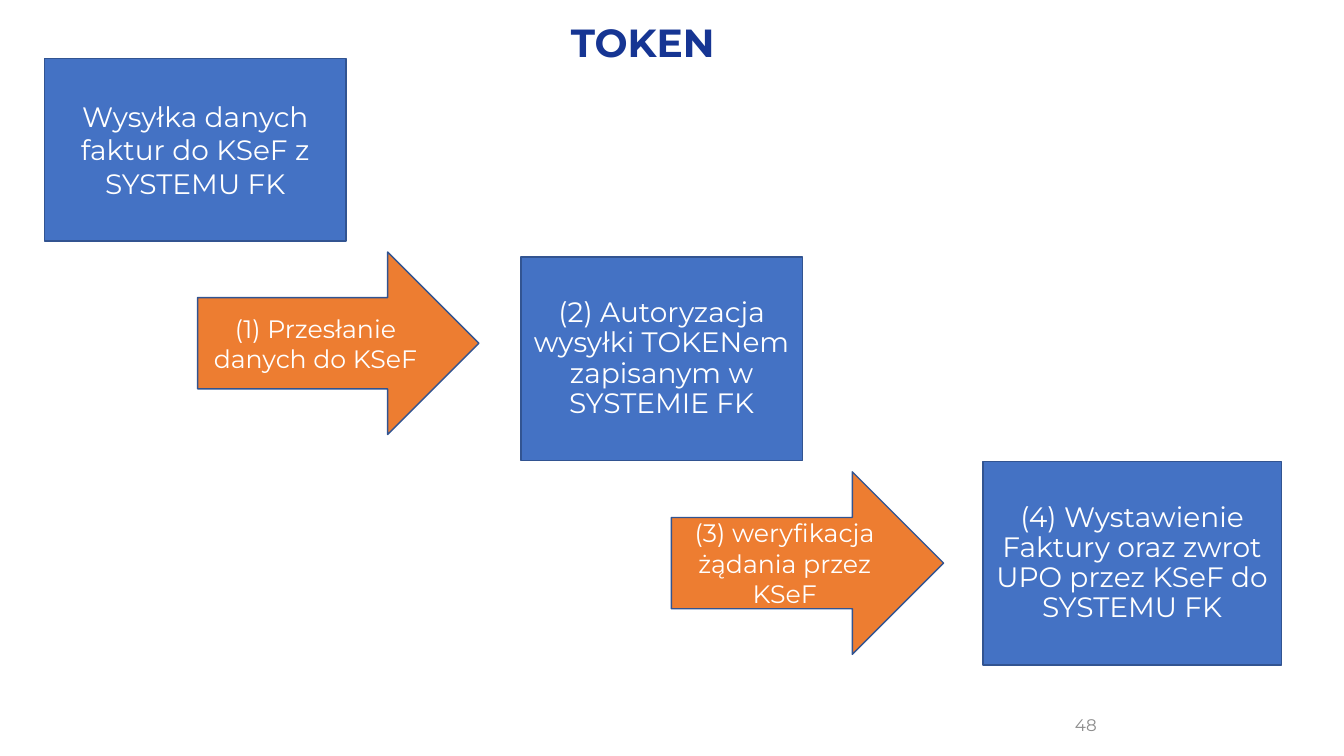
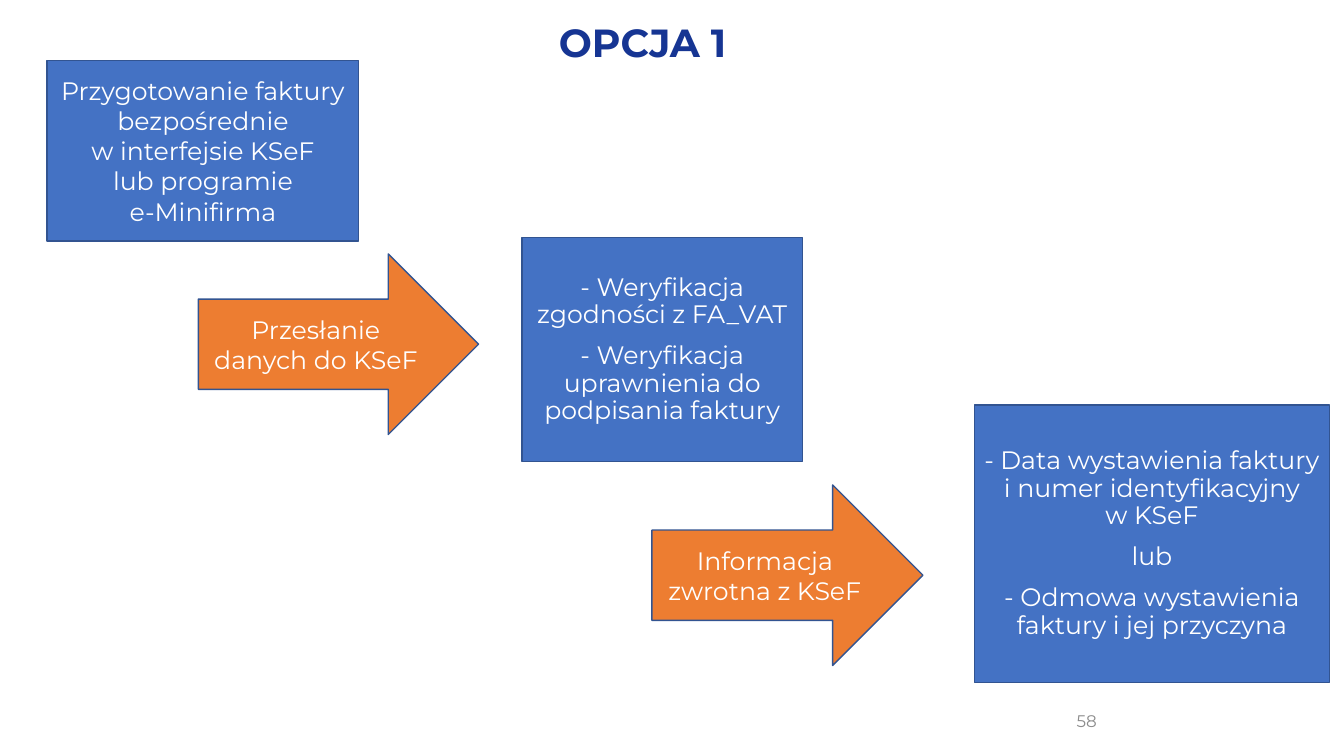
from pptx import Presentation
from pptx.dml.color import RGBColor
from pptx.enum.shapes import MSO_SHAPE
from pptx.enum.text import MSO_ANCHOR, PP_ALIGN
from pptx.util import Cm, Pt

RECTANGLE = MSO_SHAPE.RECTANGLE
RIGHT_ARROW = MSO_SHAPE.RIGHT_ARROW
TOP = MSO_ANCHOR.TOP
MIDDLE = MSO_ANCHOR.MIDDLE
CENTER = PP_ALIGN.CENTER
RIGHT = PP_ALIGN.RIGHT

FONT = "Montserrat"
BLUE = "4472C4"
ORANGE = "ED7D31"
OUTLINE = "325491"
NAVY = "163593"
GREY = "8C8C8C"
WHITE = "FFFFFF"
TITLE_AREA = (11.33, 0.48, 9.73, 1.78)
TIGHT = 0.9
PARAGRAPH_GAP = 10


def color(value):
    return RGBColor.from_string(value)


def write(frame, text, size, ink, align=CENTER, anchor=MIDDLE, bold=False, spacing=1.0, gap=0):
    frame.word_wrap = True
    frame.vertical_anchor = anchor
    frame.text = text
    for index, paragraph in enumerate(frame.paragraphs):
        paragraph.alignment = align
        paragraph.line_spacing = spacing
        paragraph.space_before = Pt(gap if index else 0)
        for run in paragraph.runs:
            run.font.name = FONT
            run.font.size = Pt(size)
            run.font.bold = bold
            run.font.color.rgb = color(ink)


def add_label(slide, area, text, size, ink, **style):
    label = slide.shapes.add_textbox(*map(Cm, area))
    write(label.text_frame, text, size, ink, **style)


def add_block(slide, kind, fill, area, text, size, **style):
    block = slide.shapes.add_shape(kind, *map(Cm, area))
    block.shadow.inherit = False
    block.fill.solid()
    block.fill.fore_color.rgb = color(fill)
    block.line.color.rgb = color(OUTLINE)
    block.line.width = Pt(1)
    write(block.text_frame, text, size, WHITE, **style)
    return block


def add_start(slide, area, text, size):
    add_block(slide, RECTANGLE, BLUE, area, text, size)


def add_transfer(slide, area, text):
    add_block(slide, RIGHT_ARROW, ORANGE, area, text, 18)


def add_check(slide, area, text, size):
    return add_block(slide, RECTANGLE, BLUE, area, text, size, spacing=TIGHT, gap=PARAGRAPH_GAP)


def add_result(slide, area, text, size):
    frame = add_check(slide, area, text, size).text_frame
    frame.margin_left = frame.margin_right = Cm(0.18)
    frame.margin_top = frame.margin_bottom = Cm(0.1)


def add_slide(deck, title, number, number_area):
    slide = deck.slides.add_slide(deck.slide_layouts[6])
    add_label(slide, TITLE_AREA, title, 28, NAVY, anchor=TOP, bold=True, spacing=TIGHT)
    add_label(slide, number_area, number, 12, GREY, align=RIGHT)
    return slide


def build_token(deck):
    slide = add_slide(deck, "TOKEN", "48", (22.73, 17.86, 5.16, 0.81))
    add_start(slide, (1.12, 1.47, 7.6, 4.6), "Wysyłka danych faktur do KSeF z SYSTEMU FK", 20)
    add_transfer(slide, (4.98, 6.35, 7.09, 4.6), "(1) Przesłanie danych do KSeF")
    add_check(slide, (13.13, 6.48, 7.09, 5.13),
              "(2) Autoryzacja wysyłki TOKENem zapisanym w SYSTEMIE FK", 20)
    add_transfer(slide, (16.92, 11.89, 6.86, 4.6), "(3) weryfikacja żądania przez KSeF")
    add_result(slide, (24.77, 11.63, 7.52, 5.13),
               "(4) Wystawienie Faktury oraz zwrot UPO przez KSeF do SYSTEMU FK", 20)


def build_option(deck):
    slide = add_slide(deck, "OPCJA 1", "58", (22.17, 17.65, 5.72, 1.02))
    add_start(slide, (1.19, 1.52, 7.85, 4.55),
              "Przygotowanie faktury bezpośrednie\vw interfejsie KSeF\vlub programie\ne-Minifirma", 18)
    add_transfer(slide, (5, 6.4, 7.06, 4.55), "Przesłanie danych do KSeF")
    add_check(slide, (13.16, 5.99, 7.06, 5.64),
              "- Weryfikacja zgodności z FA_VAT\n- Weryfikacja uprawnienia do podpisania faktury", 18)
    add_transfer(slide, (16.43, 12.22, 6.83, 4.55), "Informacja zwrotna z KSeF")
    add_result(slide, (24.56, 10.21, 8.94, 6.99),
               "- Data wystawienia faktury i numer identyfikacyjny\vw KSeF\n"
               "lub\n- Odmowa wystawienia faktury i jej przyczyna", 18)


def main():
    deck = Presentation()
    deck.slide_width = Cm(33.87)
    deck.slide_height = Cm(19.05)
    build_token(deck)
    build_option(deck)
    deck.save("out.pptx")


if __name__ == "__main__":
    main()
